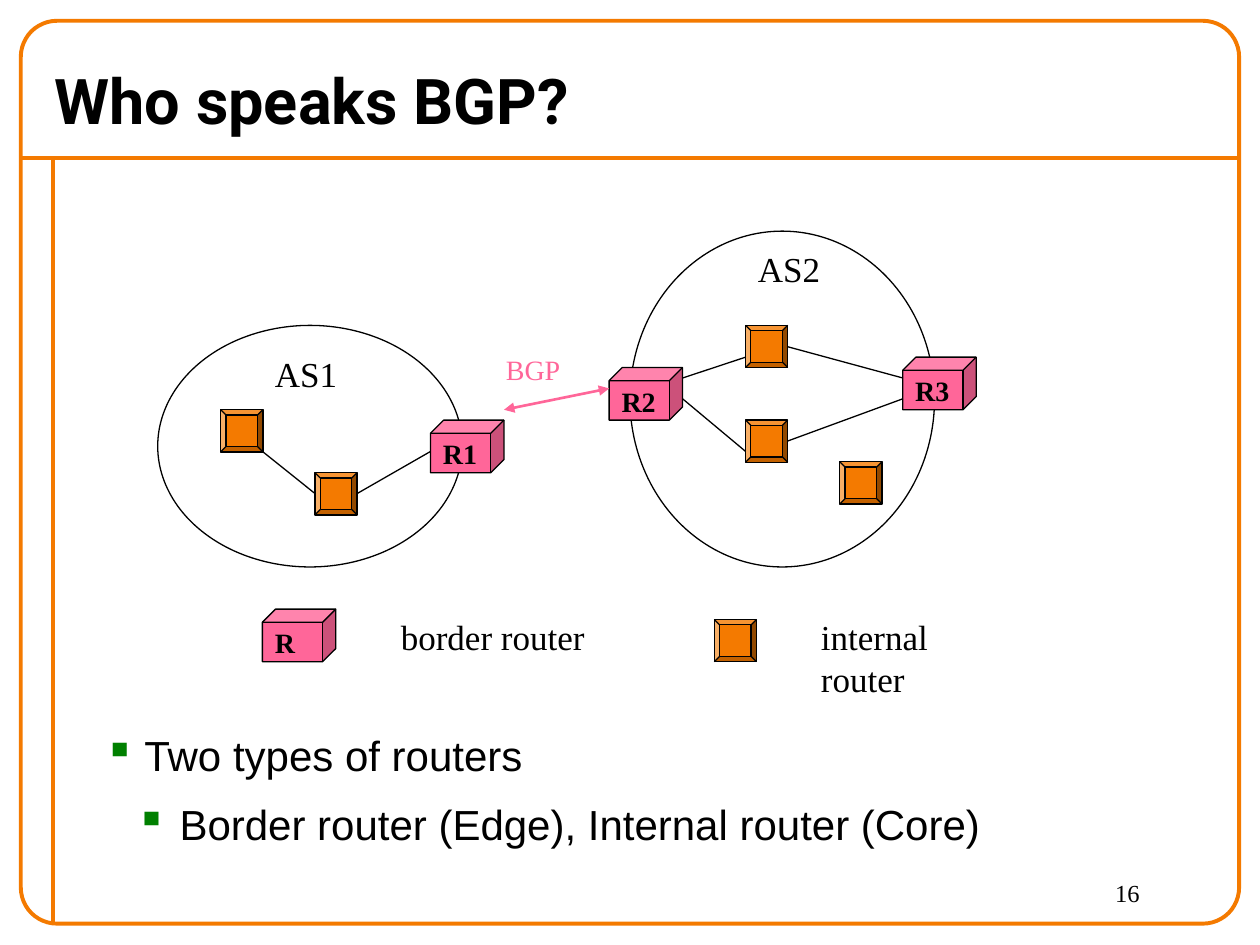
from lxml.etree import SubElement
from pptx import Presentation
from pptx.dml.color import RGBColor
from pptx.enum.shapes import MSO_CONNECTOR, MSO_SHAPE
from pptx.enum.text import MSO_ANCHOR
from pptx.oxml.ns import qn
from pptx.util import Cm, Pt

COLORS = {"black": "000000", "orange": "F47A00", "pink": "FF6699", "green": "008000"}
SERIF = "Times New Roman"
FORMATS = {
    "title": {"name": "Roboto", "size": Pt(36), "bold": True},
    "body": {"name": "Arial", "size": Pt(24)},
    "caption": {"name": SERIF, "size": Pt(20)},
    "router": {"name": SERIF, "size": Pt(16), "bold": True},
    "protocol": {"name": SERIF, "size": Pt(16)},
    "number": {"name": SERIF, "size": Pt(14)},
}


def add_outline(shapes, kind, at, line="black", width=0.75, fill=None):
    outline = shapes.add_shape(kind, *map(Cm, at))
    outline.shadow.inherit = False
    outline.line.color.rgb = RGBColor.from_string(COLORS[line])
    outline.line.width = Pt(width)
    if fill:
        outline.fill.solid()
        outline.fill.fore_color.rgb = RGBColor.from_string(COLORS[fill])
    else:
        outline.fill.background()
    return outline


def add_label(shapes, lines, at, style, color="black", wrap=False):
    """Add a text box with one paragraph per line and return its text frame."""
    frame = shapes.add_textbox(*map(Cm, at)).text_frame
    frame.word_wrap = wrap
    frame.text = "\n".join(lines)
    for paragraph in frame.paragraphs:
        font = paragraph.runs[0].font
        font.color.rgb = RGBColor.from_string(COLORS[color])
        for attribute, value in FORMATS[style].items():
            setattr(font, attribute, value)
    return frame


prs = Presentation()
prs.slide_width, prs.slide_height = Cm(25.4), Cm(19.05)
slide = prs.slides.add_slide(prs.slide_layouts[6])
shapes = slide.shapes

# Page frame, title and number
border = add_outline(shapes, MSO_SHAPE.ROUNDED_RECTANGLE, (0.42, 0.42, 24.56, 18.2), "orange", 2.25)
border.adjustments[0] = 0.04
title = add_label(shapes, ["Who speaks BGP?"], (0.85, 1.06, 24.55, 1.9), "title", wrap=True)
title.vertical_anchor = MSO_ANCHOR.MIDDLE
add_label(shapes, ["16"], (22.23, 17.57, 2.54, 1.06), "number", wrap=True)

# Autonomous systems
for system in [(3.18, 6.56, 6.14, 4.87), (12.7, 4.66, 6.14, 6.77)]:
    add_outline(shapes, MSO_SHAPE.OVAL, system)

# Border routers, the first one in the legend
for router, left, top in [("R", 5.29, 12.28), ("R2", 12.28, 7.41),
                          ("R1", 8.68, 8.47), ("R3", 18.2, 7.2)]:
    group = shapes.add_group_shape()
    add_outline(group.shapes, MSO_SHAPE.CUBE, (left, top, 1.48, 1.06), fill="pink")
    add_label(group.shapes, [router], (left, top + 0.21, 1.27, 0.94), "router", wrap=True)

# Internal routers, the first one in the legend
for left, top in [(14.4, 12.49), (15.03, 6.56), (15.03, 8.47),
                  (16.93, 9.31), (4.45, 8.26), (6.35, 9.53)]:
    add_outline(shapes, MSO_SHAPE.BEVEL, (left, top, 0.85, 0.85), fill="orange")

# Rules of the page, BGP session and links between routers
links = [
    ((0.42, 3.18, 24.98, 3.18), "orange", 2.25, False),
    ((1.06, 3.18, 1.06, 18.62), "orange", 2.25, False),
    ((10.16, 8.26, 12.28, 7.83), "pink", 1.5, True),
    ((13.76, 7.62, 15.03, 7.2), "black", 0.75, False),
    ((13.76, 8.04, 15.03, 9.1), "black", 0.75, False),
    ((15.88, 6.99, 18.2, 7.62), "black", 0.75, False),
    ((15.88, 8.89, 18.2, 8.04), "black", 0.75, False),
    ((7.2, 9.95, 8.68, 9.1), "black", 0.75, False),
    ((6.35, 9.95, 5.29, 9.1), "black", 0.75, False),
]
for ends, color, width, arrows in links:
    link = shapes.add_connector(MSO_CONNECTOR.STRAIGHT, *map(Cm, ends))
    link.line.color.rgb = RGBColor.from_string(COLORS[color])
    link.line.width = Pt(width)
    if arrows:
        for end in ("a:headEnd", "a:tailEnd"):
            SubElement(link.line._get_or_add_ln(), qn(end), type="triangle")
    SubElement(link._element.spPr, qn("a:effectLst"))

# Captions
for caption, at, style, color in [
    ("AS1", (5.29, 6.99, 1.78, 1.09), "caption", "black"),
    ("AS2", (15.03, 4.87, 1.78, 1.09), "caption", "black"),
    ("BGP", (9.95, 6.99, 1.6, 0.94), "protocol", "pink"),
    ("border router", (7.83, 12.28, 4.22, 1.09), "caption", "black"),
    ("internal router", (16.3, 12.28, 4.52, 1.09), "caption", "black"),
]:
    add_label(shapes, [caption], at, style, color)

# Bulleted summary
summary = add_label(
    shapes,
    ["Two types of routers", "Border router (Edge), Internal router (Core)"],
    (1.85, 14.27, 21.84, 2.9), "body", wrap=True,
)
for level, (paragraph, margin, hanging) in enumerate(
        zip(summary.paragraphs, (0.81, 1.52), (0.81, 0.88))):
    paragraph.level = level
    paragraph.line_spacing = 1.3
    paragraph.space_before = Pt(2 * level)
    properties = paragraph._p.get_or_add_pPr()
    properties.set("marL", str(Cm(margin)))
    properties.set("indent", str(-Cm(hanging)))
    bullet_color = SubElement(properties, qn("a:buClr"))
    SubElement(bullet_color, qn("a:srgbClr"), val=COLORS["green"])
    SubElement(properties, qn("a:buChar"), char="▪")

prs.save("out.pptx")
